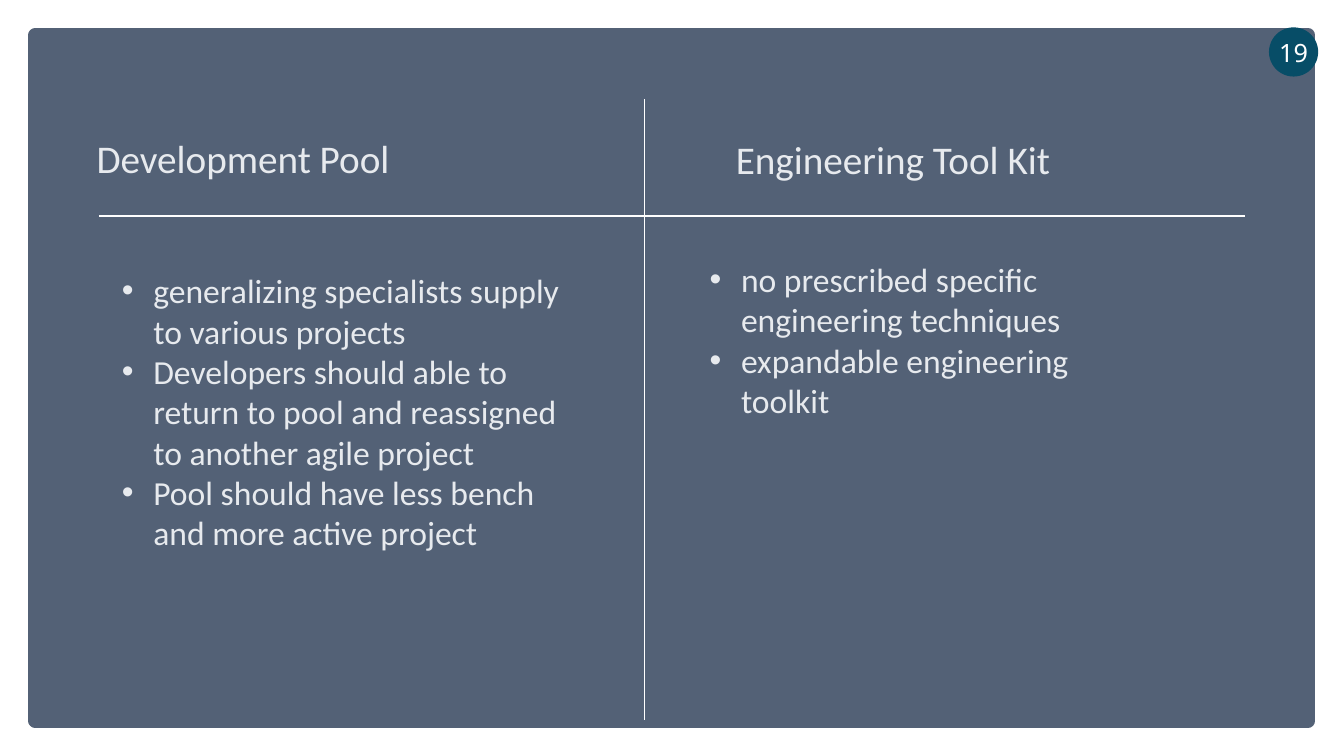
from lxml.etree import SubElement
from pptx import Presentation
from pptx.dml.color import RGBColor
from pptx.enum.shapes import MSO_CONNECTOR, MSO_SHAPE
from pptx.enum.text import MSO_ANCHOR, MSO_AUTO_SIZE, PP_ALIGN
from pptx.oxml.ns import qn
from pptx.util import Cm, Pt

COLOURS = {"panel": "536176", "badge": "074D67", "line": "FFFFFF", "text": "E7EAEE"}
HEADING = {"name": "Calibri", "size": Pt(28), "bold": False}
BODY = {"name": "Calibri", "size": Pt(24), "bold": False}
NUMBER = {"name": "Noto Sans", "size": Pt(18)}
BULLET_INDENT = Cm(0.79)


def colour(name):
    return RGBColor.from_string(COLOURS[name])


def apply_format(target, values):
    for name, value in values.items():
        setattr(target, name, value)


def add_filled(slide, kind, box, name):
    shape = slide.shapes.add_shape(kind, *map(Cm, box))
    shape.shadow.inherit = False
    shape.fill.solid()
    shape.fill.fore_color.rgb = colour(name)
    return shape


def add_rule(slide, start, end, width):
    rule = slide.shapes.add_connector(MSO_CONNECTOR.STRAIGHT, *map(Cm, start + end))
    rule.line.color.rgb = colour("line")
    rule.line.width = Pt(width)
    SubElement(rule.element.spPr, qn("a:effectLst"))


def build_panel(slide, box):
    """Background panel with its crossing rules."""
    left, top, width, height = box
    panel = add_filled(slide, MSO_SHAPE.RECTANGLE, box, "panel")
    panel.line.color.rgb = colour("panel")
    panel.line.width = Pt(10)
    # The panel lies behind the placeholders
    slide.shapes[0].element.addprevious(panel.element)
    add_rule(slide, (left + 1.6, top + 4.55), (left + width - 1.6, top + 4.55), 1.75)
    add_rule(slide, (left + 15.34, top + 1.6), (left + 15.34, top + height - 0.02), 0.5)


def build_badge(slide, box, number):
    """Round slide number."""
    badge = add_filled(slide, MSO_SHAPE.OVAL, box, "badge")
    badge.line.fill.background()
    frame = badge.text_frame
    apply_format(frame, {"text": number, "word_wrap": False,
                         "vertical_anchor": MSO_ANCHOR.MIDDLE})
    paragraph = frame.paragraphs[0]
    apply_format(paragraph, {"alignment": PP_ALIGN.CENTER, "space_after": Pt(6)})
    apply_format(paragraph.font, NUMBER)
    paragraph.font.color.rgb = colour("line")


def fill_placeholder(shape, box, lines, font_values, bulleted=False):
    apply_format(shape, dict(zip(("left", "top", "width", "height"), map(Cm, box))))
    frame = shape.text_frame
    apply_format(frame, {"text": "\n".join(lines), "word_wrap": True,
                         "auto_size": MSO_AUTO_SIZE.NONE,
                         "vertical_anchor": MSO_ANCHOR.TOP})
    for paragraph in frame.paragraphs:
        apply_format(paragraph, {"space_before": Pt(0), "alignment": PP_ALIGN.LEFT})
        apply_format(paragraph.font, font_values)
        paragraph.font.color.rgb = colour("text")
        if bulleted:
            properties = paragraph._p.get_or_add_pPr()
            properties.set("marL", str(BULLET_INDENT))
            properties.set("indent", str(-BULLET_INDENT))


def build_column(heading, body, box, title, items, list_offset):
    """Heading at the top of the box, bulleted list below it."""
    left, top, width, height = box
    shift, drop, list_width = list_offset
    fill_placeholder(heading, (left, top, width, 1.45), [title], HEADING)
    list_box = (left + shift, top + drop, list_width, height - drop)
    fill_placeholder(body, list_box, items, BODY, bulleted=True)


def main():
    presentation = Presentation()
    presentation.slide_width, presentation.slide_height = Cm(33.87), Cm(19.05)
    slide = presentation.slides.add_slide(presentation.slide_layouts.get_by_name("Comparison"))
    title, left_heading, left_body, right_heading, right_body = slide.placeholders
    title.element.getparent().remove(title.element)

    build_panel(slide, (0.89, 0.89, 32.08, 17.27))
    build_column(left_heading, left_body, (2.18, 3.25, 12.55, 10.87), "Development Pool",
                 ["generalizing specialists supply to various projects",
                  "Developers should able to return to pool and reassigned to another agile project",
                  "Pool should have less bench and more active project"],
                 (0.64, 3.43, 12.04))
    build_column(right_heading, right_body, (18.29, 3.28, 12.55, 8.5), "Engineering Tool Kit",
                 ["no prescribed specific engineering techniques",
                  "expandable engineering toolkit"],
                 (-0.66, 3.12, 10.85))
    build_badge(slide, (31.98, 0.69, 1.24, 1.24), "19")
    presentation.save("out.pptx")


if __name__ == "__main__":
    main()
